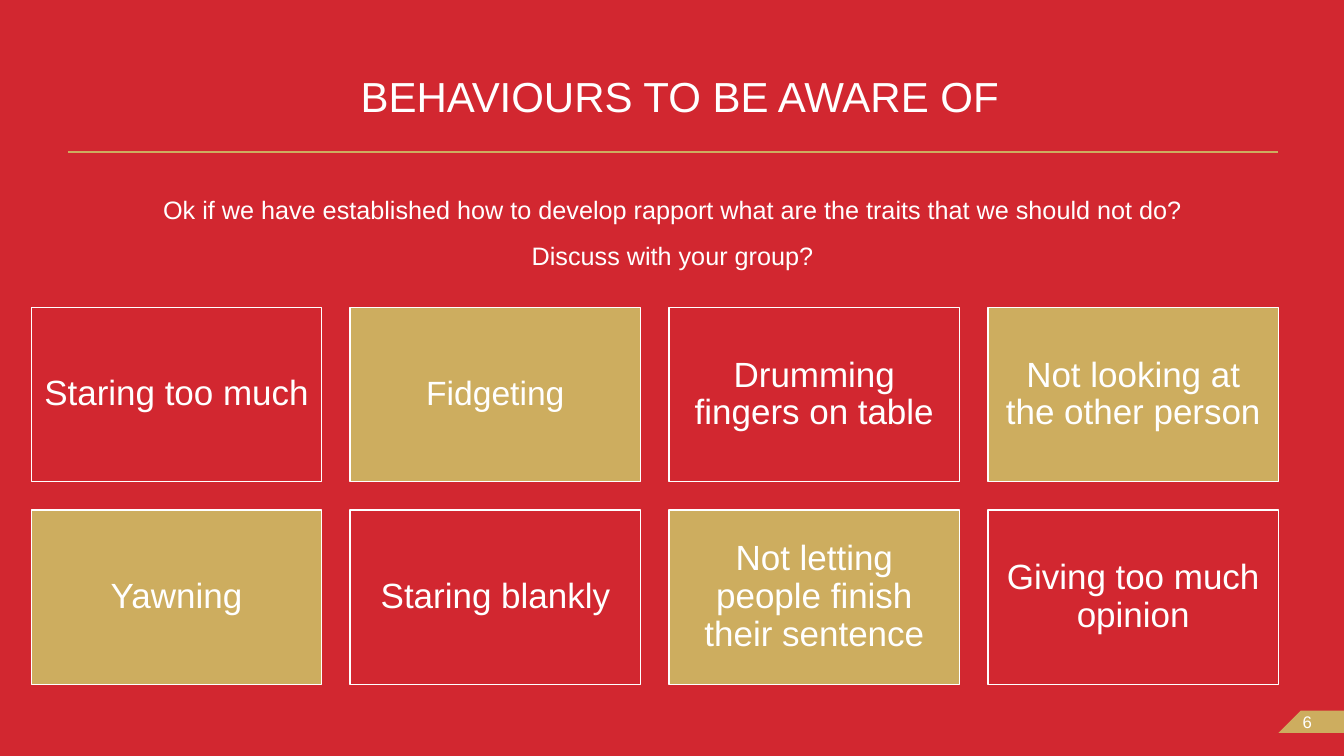
"""Build the slide on behaviours to be aware of."""
from pptx import Presentation
from pptx.dml.color import RGBColor
from pptx.enum.shapes import MSO_CONNECTOR, MSO_SHAPE
from pptx.enum.text import MSO_ANCHOR, PP_ALIGN
from pptx.oxml.ns import qn
from pptx.util import Inches, Pt
from lxml.etree import SubElement

COLORS = {"red": "D22730", "gold": "CDAD5F", "white": "FFFFFF"}
TITLE = "BEHAVIOURS TO BE AWARE OF"
INTRO = [
    "Ok if we have established how to develop rapport what are the traits that we should not do?",
    "Discuss with your group?",
]
BEHAVIOURS = [
    [("Staring too much", 25), ("Fidgeting", 24),
     ("Drumming fingers on table", 25), ("Not looking at the other person", 25)],
    [("Yawning", 25), ("Staring blankly", 25),
     ("Not letting people finish their sentence", 25), ("Giving too much opinion", 25)],
]
PAGE_NUMBER = "6"
PAGE_TAB = [(12.9, 7.05), (13.33, 7.05), (13.33, 7.27), (12.68, 7.27)]
LEFT, TOP, CARD_W, CARD_H = 0.31, 3.05, 2.88, 1.73
STEP_X, STEP_Y = 3.163, 2.01


def rgb(name):
    return RGBColor.from_string(COLORS[name])


def write(sp, lines, size, spacing=1.0, align=PP_ALIGN.CENTER,
          anchor=MSO_ANCHOR.MIDDLE, margins=(0, 0, 0, 0)):
    tf = sp.text_frame
    tf.word_wrap = True
    tf.vertical_anchor = anchor
    tf.margin_left, tf.margin_top, tf.margin_right, tf.margin_bottom = map(Inches, margins)
    for i, line in enumerate(lines):
        p = tf.add_paragraph() if i else tf.paragraphs[0]
        p.text = line
        p.alignment = align
        p.line_spacing = spacing
        p.space_before = Pt(0)
        p.font.name = "Arial"
        p.font.size = Pt(size)
        p.font.color.rgb = rgb("white")


def paint(sp, fill, line=None):
    sp.shadow.inherit = False
    sp.fill.solid()
    sp.fill.fore_color.rgb = rgb(fill)
    if line:
        sp.line.color.rgb = rgb(line)
        sp.line.width = Pt(1)
    else:
        sp.line.fill.background()


def main():
    prs = Presentation()
    prs.slide_width, prs.slide_height = Inches(13.33), Inches(7.5)
    s = prs.slides.add_slide(prs.slide_layouts[5])
    s.background.fill.solid()
    s.background.fill.fore_color.rgb = rgb("red")

    title = s.shapes.title
    title.left, title.top, title.width, title.height = map(Inches, (1.42, 0.33, 10.65, 0.87))
    write(title, [TITLE], 30, 0.8, anchor=MSO_ANCHOR.BOTTOM)

    rule = s.shapes.add_connector(
        MSO_CONNECTOR.STRAIGHT, *map(Inches, (0.67, 1.51, 12.68, 1.51)))
    rule.line.color.rgb = rgb("gold")
    rule.line.width = Pt(1)
    SubElement(rule._element.spPr, qn("a:effectLst"))

    intro = s.shapes.add_textbox(*map(Inches, (0.66, 1.78, 12.02, 0.79)))
    write(intro, INTRO, 18, 1.5, anchor=MSO_ANCHOR.TOP)

    for row, cards in enumerate(BEHAVIOURS):
        for col, (text, size) in enumerate(cards):
            box = (LEFT + col * STEP_X, TOP + row * STEP_Y, CARD_W, CARD_H)
            card = s.shapes.add_shape(MSO_SHAPE.RECTANGLE, *map(Inches, box))
            paint(card, "gold" if (row + col) % 2 else "red", "white")
            write(card, [text], size, 0.9, margins=(0.1, 0.1, 0.1, 0.1))

    points = [(Inches(x), Inches(y)) for x, y in PAGE_TAB]
    builder = s.shapes.build_freeform(*points[0])
    builder.add_line_segments(points[1:], close=True)
    tab = builder.convert_to_shape()
    paint(tab, "gold")
    write(tab, [PAGE_NUMBER], 12, align=PP_ALIGN.LEFT, margins=(0.24, 0, 0, 0))

    prs.save("out.pptx")


if __name__ == "__main__":
    main()
